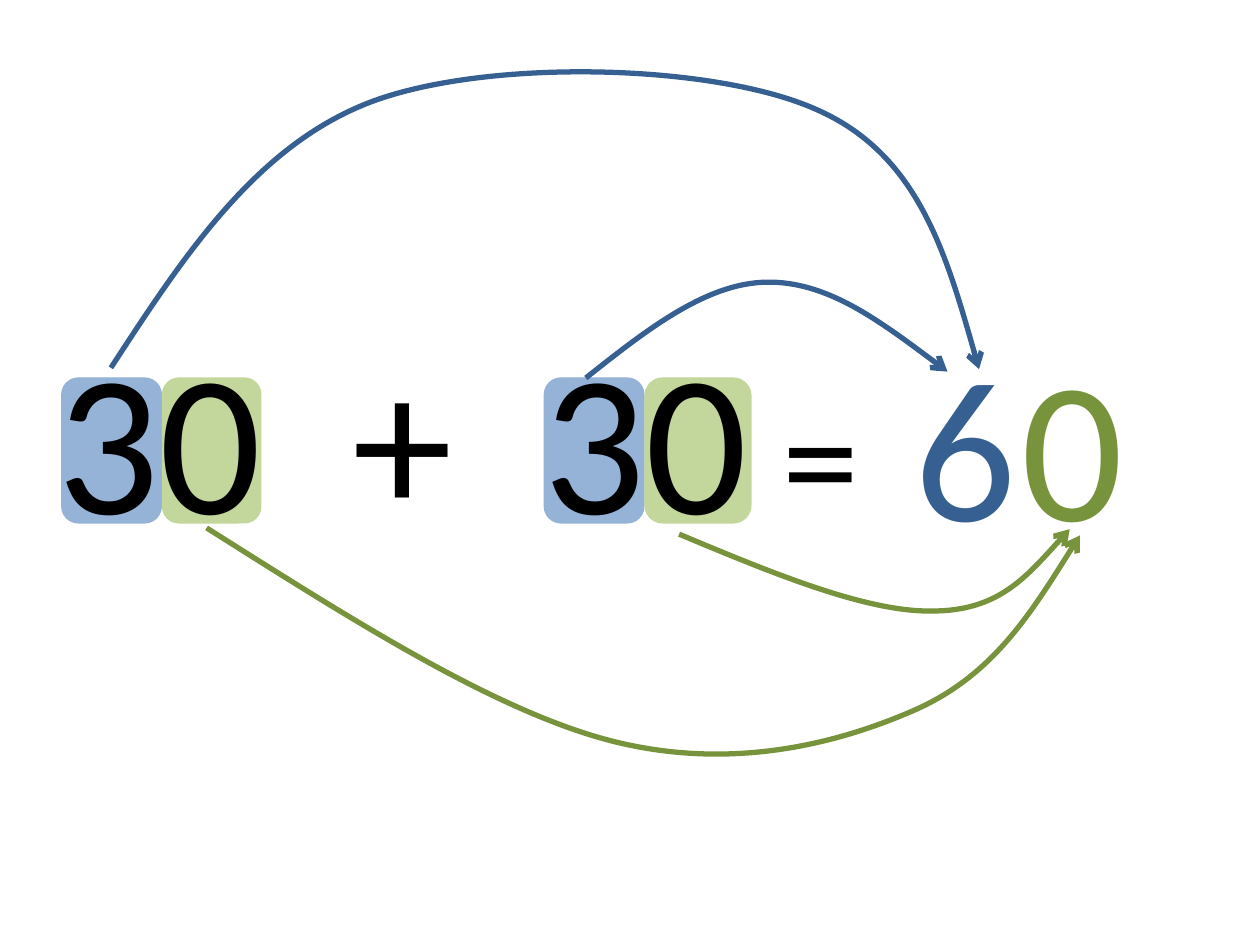
from lxml.etree import SubElement
from pptx import Presentation
from pptx.dml.color import RGBColor
from pptx.enum.shapes import MSO_SHAPE as Shape
from pptx.enum.text import MSO_AUTO_SIZE as AutoSize, PP_ALIGN as Align
from pptx.oxml.ns import qn
from pptx.util import Inches, Pt

COLORS = {
    "tens": "376092", "tens_tile": "95B3D7",
    "ones": "77933C", "ones_tile": "C3D69B",
    "black": "000000",
}
# The slide is a grid of 100 columns by 75 rows of equal size
COLUMNS, ROWS = 100, 75
CELL = Inches(10) // COLUMNS
FONT = "Calibri"
TILE_TOP, TILE_HEIGHT, TILE_STEP = 30, 11.5, 8
DIGIT_SIZE, EQUALS_SIZE = 115, 88


def grid(*cells):
    return [round(cell * CELL) for cell in cells]


def color(name):
    return RGBColor.from_string(COLORS[name])


def add_tile(slide, left, width, fill):
    tile = slide.shapes.add_shape(
        Shape.ROUNDED_RECTANGLE, *grid(left, TILE_TOP, width, TILE_HEIGHT))
    tile.shadow.inherit = False
    tile.fill.solid()
    tile.fill.fore_color.rgb = color(fill)
    tile.line.color.rgb = color(fill)
    tile.line.width = Pt(0.75)


def add_run(paragraph, text, size=DIGIT_SIZE, ink="black"):
    run = paragraph.add_run()
    run.text = text
    run.font.name = FONT
    run.font.size = Pt(size)
    run.font.color.rgb = color(ink)


def add_text(slide, box, text, align=Align.LEFT, **run_format):
    frame = slide.shapes.add_textbox(*grid(*box)).text_frame
    frame.word_wrap = True
    frame.auto_size = AutoSize.SHAPE_TO_FIT_TEXT
    paragraph = frame.paragraphs[0]
    paragraph.alignment = align
    # Space before, as a share of the line
    spacing = SubElement(paragraph._p.get_or_add_pPr(), qn("a:spcBef"))
    SubElement(spacing, qn("a:spcPct"), val="50000")
    add_run(paragraph, text, **run_format)
    return paragraph


def add_curved_arrow(slide, points, ink):
    """Draw Bezier curves: a start, then two controls and an end for each."""
    start, *others = [grid(*point) for point in points]
    builder = slide.shapes.build_freeform(*start)
    builder.add_line_segments(others, close=False)
    arrow = builder.convert_to_shape()
    arrow.shadow.inherit = False
    arrow.fill.background()
    arrow.line.color.rgb = color(ink)
    arrow.line.width = Pt(3)
    SubElement(arrow.line._get_or_add_ln(), qn("a:tailEnd"), type="arrow")

    # Join every three straight segments into one cubic curve
    outline = next(arrow._element.iter(qn("a:path")))
    segments = outline.findall(qn("a:lnTo"))
    for first in range(0, len(segments), 3):
        curve = SubElement(outline, qn("a:cubicBezTo"))
        for segment in segments[first:first + 3]:
            curve.append(segment[0])
            outline.remove(segment)


def main():
    presentation = Presentation()
    presentation.slide_width, presentation.slide_height = grid(COLUMNS, ROWS)
    slide = presentation.slides.add_slide(presentation.slide_layouts[6])

    # Tiles behind the tens and ones of both numbers
    for left, ones_width in ((4.9, 7.8), (43.2, 8.4)):
        add_tile(slide, left, 7.9, "tens_tile")
        add_tile(slide, left + TILE_STEP, ones_width, "ones_tile")

    # Digits of the sum
    for left, digit, ink in ((80.1, "0", "ones"), (71.6, "6", "tens")):
        add_text(slide, (left, 24.9, 8.7, 20.4), digit,
                 align=Align.CENTER, ink=ink)

    # Arrows from each digit to its place in the sum
    arrows = (
        ("ones", [(53.9, 42.4), (61.3, 45.5), (68.8, 48.6), (74, 48.5),
                  (79.2, 48.5), (82, 45.2), (84.9, 42)]),
        ("ones", [(16.4, 41.9), (27.8, 49.1), (39.2, 56.4), (48.5, 58.8),
                  (57.9, 61.2), (66.3, 59.1), (72.5, 56.4),
                  (78.7, 53.7), (82.2, 48.1), (85.7, 42.5)]),
        ("tens", [(8.8, 29.2), (14.6, 20.3), (20.4, 11.4), (29.7, 8),
                  (39.1, 4.6), (56.8, 5.1), (64.8, 8.7),
                  (72.8, 12.2), (75.3, 20.8), (77.7, 29.3)]),
        ("tens", [(46.5, 30), (51.3, 26.2), (56, 22.5), (60.8, 22.4),
                  (65.6, 22.3), (70.4, 25.9), (75.2, 29.5)]),
    )
    for ink, points in arrows:
        add_curved_arrow(slide, points, ink)

    # The addition itself
    addition = add_text(slide, (3.6, 24.4, 68, 20.4), "30  +  30")
    add_run(addition, " =", size=EQUALS_SIZE)

    presentation.save("out.pptx")


if __name__ == "__main__":
    main()
